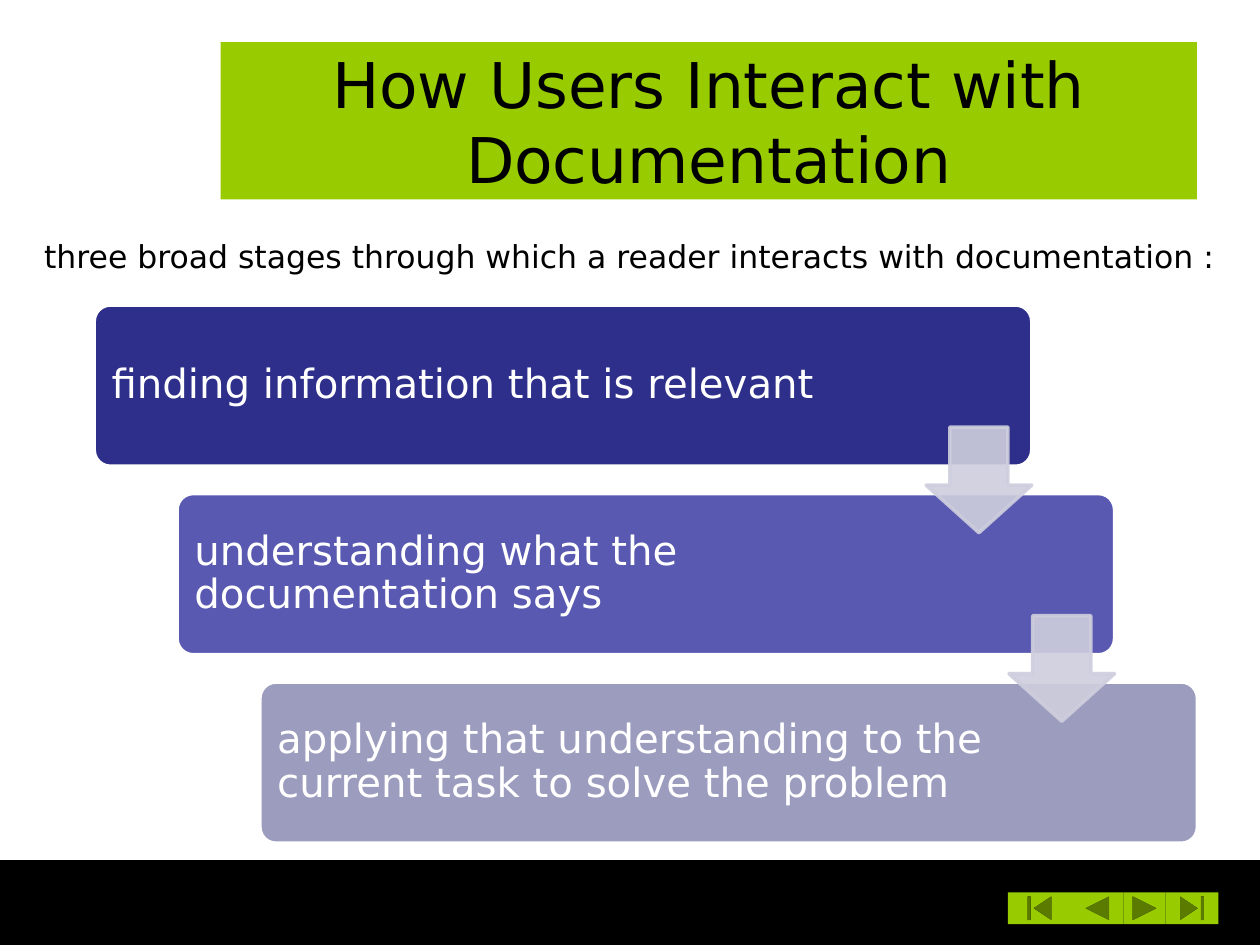
from dataclasses import dataclass

from lxml.etree import SubElement
from pptx import Presentation
from pptx.dml.color import RGBColor
from pptx.enum.shapes import MSO_SHAPE as Preset
from pptx.enum.text import MSO_ANCHOR as Anchor, MSO_AUTO_SIZE as AutoSize, PP_ALIGN as Align
from pptx.oxml.ns import qn
from pptx.util import Cm, Pt


@dataclass(frozen=True)
class Theme:
    font: str = "DejaVu Sans"
    black: str = "000000"
    white: str = "FFFFFF"
    green: str = "99CC00"
    arrow: str = "CECEDE"
    stages: tuple = ("2E2E8B", "5959B1", "9C9CBF")
    title_size: int = 36
    stage_size: int = 23
    intro_size: int = 18


def apply_format(target, values):
    for name, value in values.items():
        setattr(target, name, value)


class SlideBuilder:
    def __init__(self, slide, theme):
        self.slide = slide
        self.theme = theme

    def fill_text(self, shape, text, size, color, frame_format, paragraph_format):
        frame = shape.text_frame
        apply_format(frame, frame_format)
        paragraph = frame.paragraphs[0]
        paragraph.text = text
        apply_format(paragraph, paragraph_format)
        apply_format(paragraph.font, {"name": self.theme.font, "size": Pt(size)})
        paragraph.font.color.rgb = RGBColor.from_string(color)

    def title(self, text, left, top, width, height):
        shape = self.slide.shapes.title
        apply_format(shape, {"left": Cm(left), "top": Cm(top),
                             "width": Cm(width), "height": Cm(height)})
        shape.fill.solid()
        shape.fill.fore_color.rgb = RGBColor.from_string(self.theme.green)
        self.fill_text(shape, text, self.theme.title_size, self.theme.black,
                       {"word_wrap": True, "auto_size": AutoSize.NONE,
                        "vertical_anchor": Anchor.MIDDLE},
                       {"alignment": Align.CENTER})

    def text(self, text, left, top, width, height, size, color,
             frame_format, paragraph_format):
        shape = self.slide.shapes.add_textbox(Cm(left), Cm(top), Cm(width), Cm(height))
        self.fill_text(shape, text, size, color, frame_format, paragraph_format)

    def shape(self, preset, left, top, width, height, fill,
              line=None, line_width=2, adjustments=(), opacity=None):
        shape = self.slide.shapes.add_shape(preset, Cm(left), Cm(top), Cm(width), Cm(height))
        shape.shadow.inherit = False
        for index, value in enumerate(adjustments):
            shape.adjustments[index] = value
        shape.fill.solid()
        shape.fill.fore_color.rgb = RGBColor.from_string(fill)
        if line:
            shape.line.color.rgb = RGBColor.from_string(line)
            shape.line.width = Pt(line_width)
        else:
            shape.line.fill.background()
        if opacity:
            for color in shape.element.spPr.iter(qn("a:srgbClr")):
                SubElement(color, qn("a:alpha"), val=str(opacity * 1000))

    def stage(self, text, left, top, width, height, text_width, fill):
        self.shape(Preset.ROUNDED_RECTANGLE, left, top, width, height, fill,
                   line=self.theme.white, adjustments=(0.1,))
        inset = Cm(0.25)
        self.text(text, left + 0.1, top + 0.1, text_width, height - 0.2,
                  self.theme.stage_size, self.theme.white,
                  {"word_wrap": True, "vertical_anchor": Anchor.MIDDLE,
                   "margin_left": inset, "margin_right": inset,
                   "margin_top": inset, "margin_bottom": inset},
                  {"alignment": Align.LEFT, "line_spacing": 0.9})

    def arrow(self, left, top, size):
        self.shape(Preset.DOWN_ARROW, left, top, size, size, self.theme.arrow,
                   line=self.theme.arrow, adjustments=(0.55, 0.45), opacity=90)

    def footer(self):
        self.shape(Preset.RECTANGLE, 0, 17.35, 25.4, 1.7, self.theme.black,
                   line=self.theme.black, line_width=0.75)
        left = 20.32
        for preset, width in ((Preset.ACTION_BUTTON_BEGINNING, 1.27),
                              (Preset.ACTION_BUTTON_BACK_OR_PREVIOUS, 1.06),
                              (Preset.ACTION_BUTTON_FORWARD_OR_NEXT, 0.85),
                              (Preset.ACTION_BUTTON_END, 1.06)):
            self.shape(preset, left, 17.99, width, 0.64, self.theme.green)
            left += width


def main():
    presentation = Presentation()
    apply_format(presentation, {"slide_width": Cm(25.4), "slide_height": Cm(19.05)})
    theme = Theme()
    slide = presentation.slides.add_slide(presentation.slide_layouts.get_by_name("Title Only"))
    builder = SlideBuilder(slide, theme)

    builder.footer()
    builder.title("How Users Interact with Documentation", 4.45, 0.85, 19.68, 3.17)

    step_x, step_y = 1.67, 3.8
    stages = (("finding information that is relevant", 15.37),
              ("understanding what the documentation says", 14.91),
              ("applying that understanding to the current task to solve the problem", 14.91))
    for index, (text, text_width) in enumerate(stages):
        builder.stage(text, 1.9 + index * step_x, 6.15 + index * step_y,
                      18.9, 3.25, text_width, theme.stages[index])
    for index in range(len(stages) - 1):
        builder.arrow(18.67 + index * step_x, 8.61 + index * step_y, 2.13)

    builder.text("three broad stages through which a reader interacts with documentation :",
                 0.64, 4.65, 24.51, 1.8, theme.intro_size, theme.black,
                 {"word_wrap": False, "auto_size": AutoSize.SHAPE_TO_FIT_TEXT},
                 {"alignment": Align.LEFT})

    presentation.save("out.pptx")


if __name__ == "__main__":
    main()
